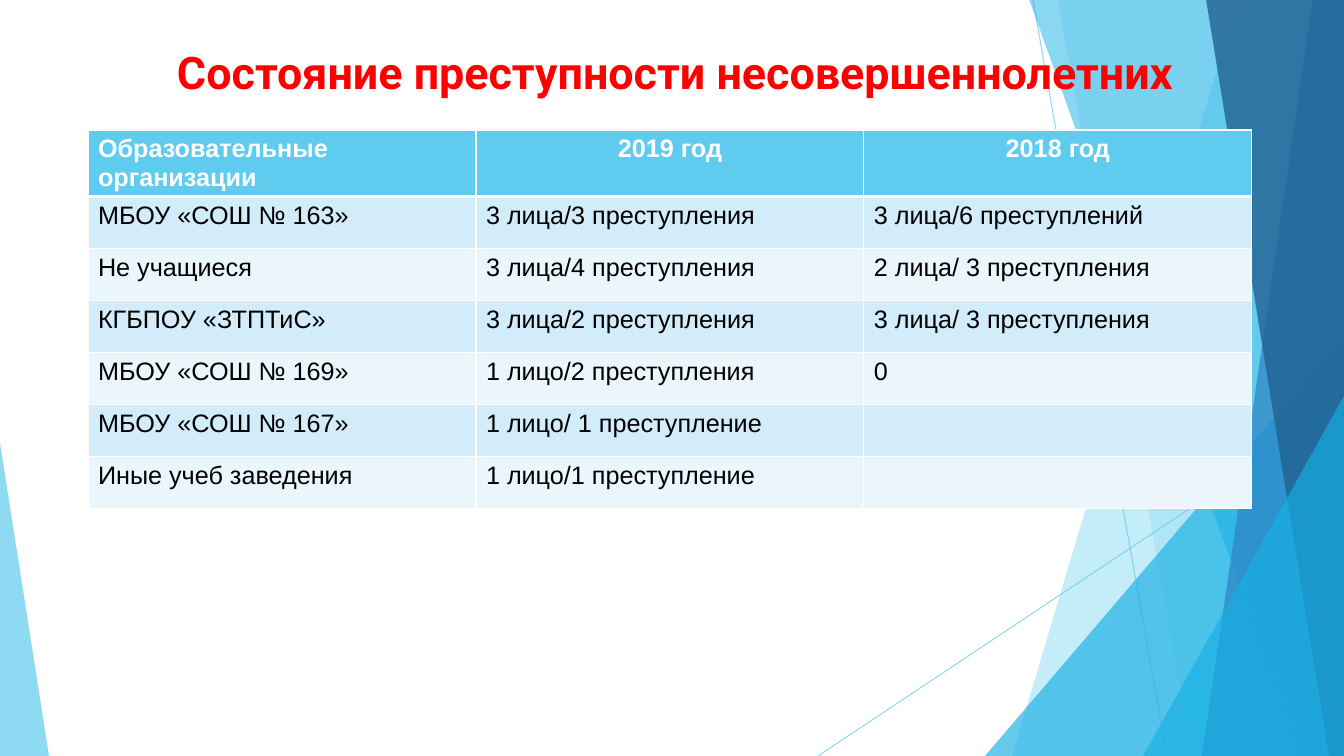
from lxml.etree import SubElement
from pptx import Presentation
from pptx.dml.color import RGBColor
from pptx.enum.shapes import MSO_CONNECTOR, MSO_SHAPE
from pptx.enum.text import MSO_ANCHOR, MSO_AUTO_SIZE, PP_ALIGN
from pptx.oxml.ns import qn
from pptx.util import Emu, Pt

PX = 914400 / 100.8
WIDTH, HEIGHT = 1344, 756

COLORS = {
    "sky": "5FCBEF",
    "cyan": "17B0E4",
    "blue": "2E83C3",
    "navy": "226292",
    "title": "FF0000",
    "white": "FFFFFF",
    "text": "000000",
    "odd_row": "D2ECF9",
    "even_row": "EAF6FC",
}

HEADER = ["Образовательные организации", "2019 год", "2018 год"]
CRIMES = [
    ["МБОУ «СОШ № 163»", "3 лица/3 преступления", "3 лица/6 преступлений"],
    ["Не учащиеся", "3 лица/4 преступления", "2 лица/ 3 преступления"],
    ["КГБПОУ «ЗТПТиС»", "3 лица/2 преступления", "3 лица/ 3 преступления"],
    ["МБОУ «СОШ № 169»", "1 лицо/2 преступления", "0"],
    ["МБОУ «СОШ № 167»", "1 лицо/ 1 преступление", ""],
    ["Иные учеб заведения", "1 лицо/1 преступление", ""],
]


def px(length):
    return Emu(round(length * PX))


def rgb(name):
    return RGBColor.from_string(COLORS[name])


def set_opacity(element, percent):
    for color in element.spPr.iter(qn("a:srgbClr")):
        SubElement(color, qn("a:alpha"), val=str(percent * 1000))


def paint(facet, color, opacity):
    facet.shadow.inherit = False
    facet.fill.solid()
    facet.fill.fore_color.rgb = rgb(color)
    facet.line.fill.background()
    set_opacity(facet._element, opacity)


def add_ray(slide, start, end):
    ray = slide.shapes.add_connector(
        MSO_CONNECTOR.STRAIGHT, *map(px, start), *map(px, end))
    ray.line.color.rgb = rgb("sky")
    ray.line.width = Pt(0.75)
    set_opacity(ray._element, 70)
    SubElement(ray._element.spPr, qn("a:effectLst"))


def add_band(slide, top_left, bottom_left, color, opacity):
    """Full-height facet reaching the right edge, with a slanted left side."""
    outline = slide.shapes.build_freeform(top_left, -1, scale=PX)
    outline.add_line_segments(
        [(WIDTH, -1), (WIDTH, HEIGHT), (bottom_left, HEIGHT)], close=True)
    paint(outline.convert_to_shape(), color, opacity)


def add_corner(slide, left, top, width, apex, color, opacity):
    """Triangle standing on the bottom edge; apex is 0 for left, 1 for right."""
    corner = slide.shapes.add_shape(
        MSO_SHAPE.ISOSCELES_TRIANGLE,
        px(left), px(top), px(width), px(HEIGHT - top))
    corner.adjustments[0] = apex
    paint(corner, color, opacity)


def add_backdrop(slide):
    add_ray(slide, (1033, 0), (1167, HEIGHT))
    add_ray(slide, (WIDTH, 406), (818, HEIGHT))
    add_band(slide, 1238, 1012, "sky", 36)
    add_band(slide, 1058, 1192, "sky", 20)
    add_corner(slide, 985, 336, 359, 1, "cyan", 66)
    add_band(slide, 1029, 1301, "cyan", 50)
    add_band(slide, 1313, 1202, "blue", 70)
    add_band(slide, 1206, 1329, "navy", 80)
    add_corner(slide, 1143, 396, 201, 1, "cyan", 66)
    add_corner(slide, 0, 443, 49, 0, "sky", 70)


def set_title(slide, text):
    title = slide.shapes.title
    title.left, title.top, title.width, title.height = map(px, (99, 40, 1153, 95))
    frame = title.text_frame
    frame.text = text
    frame.word_wrap = True
    frame.auto_size = MSO_AUTO_SIZE.NONE
    frame.vertical_anchor = MSO_ANCHOR.TOP
    paragraph = frame.paragraphs[0]
    paragraph.alignment = PP_ALIGN.CENTER
    paragraph.font.name = "Roboto"
    paragraph.font.size = Pt(32)
    paragraph.font.bold = True
    paragraph.font.color.rgb = rgb("title")
    # Bring the title in front of the backdrop.
    slide.shapes._spTree.append(title._element)


def set_borders(cell, widths):
    properties = cell._tc.get_or_add_tcPr()
    for side, width in widths.items():
        border = SubElement(properties, qn(f"a:ln{side}"), w=str(Pt(width)))
        fill = SubElement(border, qn("a:solidFill"))
        SubElement(fill, qn("a:srgbClr"), val=COLORS["white"])


def fill_cell(cell, text, row, column):
    is_header = row == 0
    above = 3 if row == 1 else 1
    below = 3 if is_header else 1
    set_borders(cell, {"L": 1, "R": 1, "T": above, "B": below})
    background = "sky" if is_header else "odd_row" if row % 2 else "even_row"
    cell.fill.solid()
    cell.fill.fore_color.rgb = rgb(background)
    cell.text = text
    paragraph = cell.text_frame.paragraphs[0]
    paragraph.font.name = "Arial"
    paragraph.font.size = Pt(18)
    paragraph.font.bold = is_header
    paragraph.font.color.rgb = rgb("white" if is_header else "text")
    if is_header and column > 0:
        paragraph.alignment = PP_ALIGN.CENTER


def add_crime_table(slide):
    rows = [HEADER, *CRIMES]
    column_width, row_height = 388, 52
    table = slide.shapes.add_table(
        len(rows), len(HEADER), px(88), px(130),
        px(column_width * len(HEADER)), px(row_height * len(rows))).table
    for row, texts in enumerate(rows):
        for column, text in enumerate(texts):
            fill_cell(table.cell(row, column), text, row, column)


def main():
    presentation = Presentation()
    presentation.slide_width, presentation.slide_height = px(WIDTH), px(HEIGHT)
    slide = presentation.slides.add_slide(presentation.slide_layouts[5])
    add_backdrop(slide)
    set_title(slide, "Состояние преступности несовершеннолетних")
    add_crime_table(slide)
    presentation.save("out.pptx")


if __name__ == "__main__":
    main()
